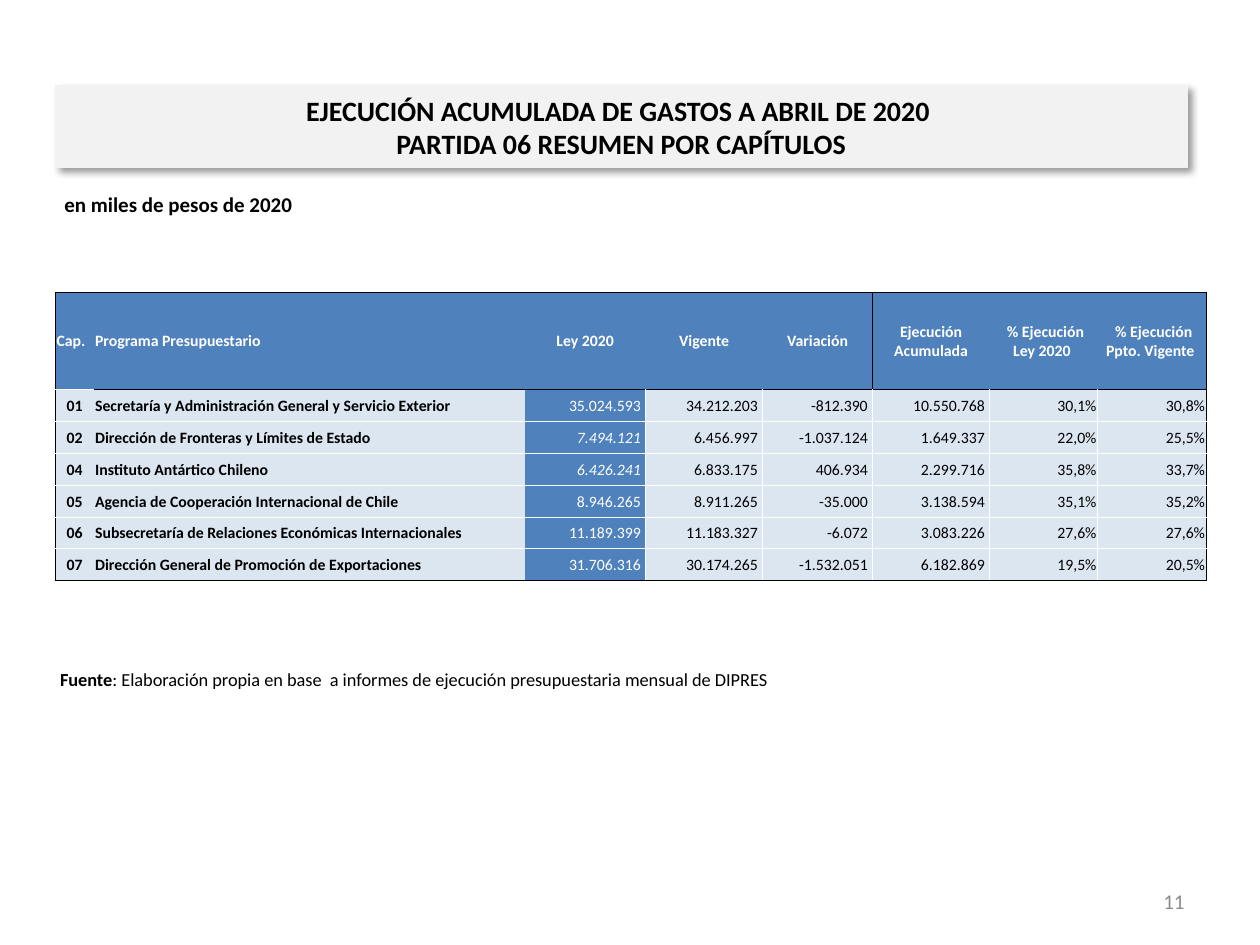
from dataclasses import dataclass

from lxml.etree import SubElement
from pptx import Presentation
from pptx.dml.color import RGBColor
from pptx.enum.shapes import MSO_SHAPE
from pptx.enum.text import MSO_ANCHOR, MSO_AUTO_SIZE, PP_ALIGN
from pptx.oxml.ns import qn
from pptx.util import Pt


@dataclass(frozen=True)
class Theme:
    """Hold the colours, font and type sizes of the slide."""
    font: str = "Calibri"
    black: str = "000000"
    white: str = "FFFFFF"
    blue: str = "4F81BD"
    pale: str = "DCE6F1"
    panel: str = "F2F2F2"
    gray: str = "8C8C8C"
    title: float = 16
    label: float = 12
    note: float = 10.5
    cell: float = 9


LOOK = Theme()
LEFT, MID, RIGHT = PP_ALIGN.LEFT, PP_ALIGN.CENTER, PP_ALIGN.RIGHT
COLS = (22, 246.2, 69, 66.9, 62.8, 66.9, 61.8, 62)
ROWS = (55.4, 18.7) + (18.15,) * 5
HEAD = ("Cap.", "Programa Presupuestario", "Ley 2020", "Vigente", "Variación",
        "Ejecución Acumulada", " % Ejecución Ley 2020 ", " % Ejecución Ppto. Vigente ")
DATA = (
    ("01", "Secretaría y Administración General y Servicio Exterior", "35.024.593 ",
     "34.212.203 ", "-812.390 ", "10.550.768 ", "30,1%", "30,8%"),
    ("02", "Dirección de Fronteras y Límites de Estado", "7.494.121 ",
     "6.456.997 ", "-1.037.124 ", "1.649.337 ", "22,0%", "25,5%"),
    ("04", "Instituto Antártico Chileno", "6.426.241 ",
     "6.833.175 ", "406.934 ", "2.299.716 ", "35,8%", "33,7%"),
    ("05", "Agencia de Cooperación Internacional de Chile", "8.946.265 ",
     "8.911.265 ", "-35.000 ", "3.138.594 ", "35,1%", "35,2%"),
    ("06", "Subsecretaría de Relaciones Económicas Internacionales", "11.189.399 ",
     "11.183.327 ", "-6.072 ", "3.083.226 ", "27,6%", "27,6%"),
    ("07", "Dirección General de Promoción de Exportaciones", "31.706.316 ",
     "30.174.265 ", "-1.532.051 ", "6.182.869 ", "19,5%", "20,5%"),
)
SLOPED = ("02", "04")


def apply(item, vals):
    """Set each named value on the item."""
    for name, val in vals.items():
        setattr(item, name, val)


def paint(fill, tint):
    """Give a fill one solid colour."""
    fill.solid()
    fill.fore_color.rgb = RGBColor.from_string(tint)


def write(para, text, size, tint=LOOK.black, bold=False, slant=False):
    """Add a run of styled text to a paragraph."""
    run = para.add_run()
    run.text = text
    apply(run.font, {"name": LOOK.font, "size": Pt(size), "bold": bold, "italic": slant})
    run.font.color.rgb = RGBColor.from_string(tint)


def label(slide, box, align=LEFT, anchor=MSO_ANCHOR.TOP):
    """Add a text box and return its paragraph."""
    frame = slide.shapes.add_textbox(*map(Pt, box)).text_frame
    apply(frame, {"word_wrap": True, "vertical_anchor": anchor})
    para = frame.paragraphs[0]
    para.alignment = align
    return para


def shade(shape):
    """Give a shape a soft shadow to the lower right."""
    shape.shadow.inherit = False
    glow = shape._element.spPr.find(qn("a:effectLst"))
    cast = SubElement(glow, qn("a:outerShdw"), blurRad=str(Pt(4)), dist=str(Pt(3)),
                      dir="2700000", algn="tl", rotWithShape="0")
    tint = SubElement(cast, qn("a:srgbClr"), val=LOOK.black)
    SubElement(tint, qn("a:alpha"), val="40000")


def banner(slide, lines):
    """Add the shadowed title panel."""
    shape = slide.shapes.add_shape(MSO_SHAPE.RECTANGLE, *map(Pt, (31.7, 49, 646.6, 46.8)))
    paint(shape.fill, LOOK.panel)
    paint(shape.line.fill, LOOK.panel)
    shape.line.width = Pt(0.75)
    shade(shape)
    frame = shape.text_frame
    apply(frame, {"word_wrap": True, "vertical_anchor": MSO_ANCHOR.MIDDLE,
                  "auto_size": MSO_AUTO_SIZE.SHAPE_TO_FIT_TEXT})
    para = frame.paragraphs[0]
    para.alignment = MID
    for spot, line in enumerate(lines):
        if spot:
            para.add_line_break()
        write(para, line, LOOK.title, bold=True)


def upright(row, col):
    """Return the colour of the edge left of a column."""
    if col in (0, len(COLS)) or (row == 0 and col == 5):
        return LOOK.black
    return LOOK.white if row and col > 2 else None


def level(row, col):
    """Return the colour of the edge above a row."""
    dark = row in (0, len(ROWS)) or (row == 1 and col > 0)
    return LOOK.black if dark else LOOK.white


def border(cell, row, col):
    """Draw the four edges of a cell."""
    props = cell._tc.get_or_add_tcPr()
    edges = {"a:lnL": upright(row, col), "a:lnR": upright(row, col + 1),
             "a:lnT": level(row, col), "a:lnB": level(row + 1, col)}
    for spot, (tag, tint) in enumerate(edges.items()):
        line = SubElement(props, qn(tag), w=str(Pt(0.5)))
        props.insert(spot, line)
        if tint:
            SubElement(SubElement(line, qn("a:solidFill")), qn("a:srgbClr"), val=tint)
        else:
            SubElement(line, qn("a:noFill"))


def fill_cell(cell, row, col, text, slant):
    """Style one cell by its place and write its text."""
    blue = row == 0 or col == 2
    apply(cell, {"margin_left": Pt(0.7), "margin_right": Pt(0.7), "margin_top": Pt(0.7),
                 "margin_bottom": Pt(0), "vertical_anchor": MSO_ANCHOR.MIDDLE})
    paint(cell.fill, LOOK.blue if blue else LOOK.pale)
    border(cell, row, col)
    para = cell.text_frame.paragraphs[0]
    if row:
        para.alignment = (MID, LEFT)[col] if col < 2 else RIGHT
    else:
        para.alignment = LEFT if col < 2 else MID
    write(para, text, LOOK.cell, LOOK.white if blue else LOOK.black,
          row == 0 or col < 2, slant)


def budget(slide):
    """Add the table of spending by chapter."""
    box = map(Pt, (31.7, 167, sum(COLS), sum(ROWS)))
    table = slide.shapes.add_table(len(ROWS), len(COLS), *box).table
    apply(table, {"first_row": False, "horz_banding": False})
    for part, width in zip(table.columns, COLS):
        part.width = Pt(width)
    for part, height in zip(table.rows, ROWS):
        part.height = Pt(height)
    for row, texts in enumerate((HEAD,) + DATA):
        for col, text in enumerate(texts):
            slant = col == 2 and texts[0] in SLOPED
            fill_cell(table.cell(row, col), row, col, text, slant)


def main():
    """Build the slide and save it."""
    deck = Presentation()
    apply(deck, {"slide_width": Pt(720), "slide_height": Pt(540)})
    slide = deck.slides.add_slide(deck.slide_layouts[6])
    page = label(slide, (516, 500.5, 168, 28.8), RIGHT, MSO_ANCHOR.MIDDLE)
    write(page, "11", LOOK.label, LOOK.gray)
    note = label(slide, (27.2, 378, 661.7, 28.8))
    write(note, "Fuente", LOOK.note, bold=True)
    write(note, ": Elaboración propia en base  a informes de ejecución "
                "presupuestaria mensual de DIPRES", LOOK.note)
    unit = label(slide, (29.7, 106, 648, 36))
    write(unit, "en miles de pesos de 2020", LOOK.label, bold=True)
    banner(slide, ("EJECUCIÓN ACUMULADA DE GASTOS A ABRIL DE 2020 ",
                   "PARTIDA 06 RESUMEN POR CAPÍTULOS"))
    budget(slide)
    deck.save("out.pptx")


if __name__ == "__main__":
    main()
